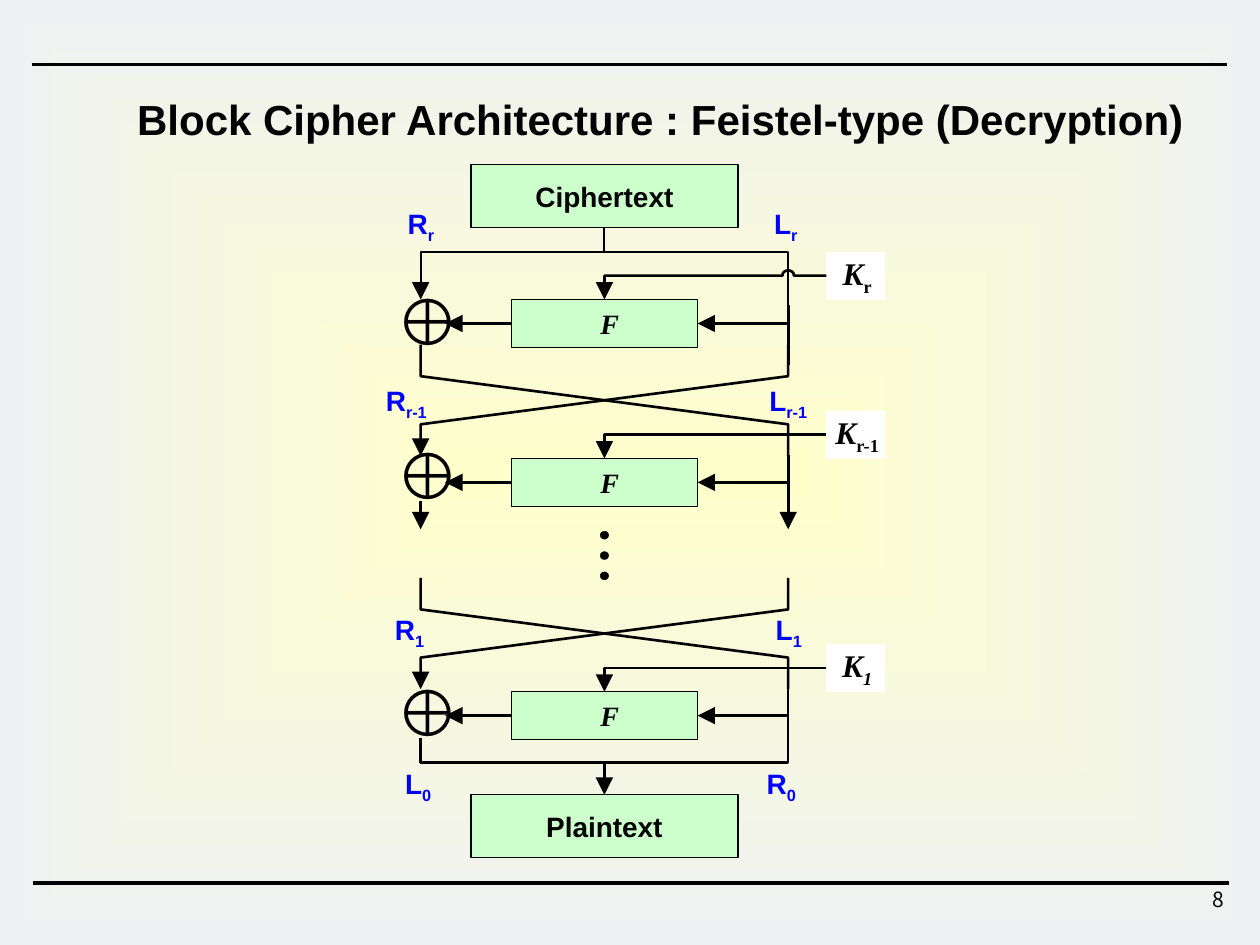
from dataclasses import dataclass

from lxml import etree
from pptx import Presentation
from pptx.dml.color import RGBColor
from pptx.enum.shapes import MSO_CONNECTOR, MSO_SHAPE
from pptx.enum.text import MSO_ANCHOR, PP_ALIGN
from pptx.oxml.ns import qn
from pptx.util import Pt

STRAIGHT = MSO_CONNECTOR.STRAIGHT
RECT, OVAL = MSO_SHAPE.RECTANGLE, MSO_SHAPE.OVAL
LEFT, CENTER, RIGHT = PP_ALIGN.LEFT, PP_ALIGN.CENTER, PP_ALIGN.RIGHT
MIDDLE, TOP = MSO_ANCHOR.MIDDLE, MSO_ANCHOR.TOP
SIDE_TOP, SIDE_LEFT, SIDE_BOTTOM, SIDE_RIGHT = range(4)


@dataclass(frozen=True)
class Theme:
    ink = RGBColor(0, 0, 0)
    white = RGBColor(255, 255, 255)
    block = RGBColor(0xCC, 0xFF, 0xCC)
    label = RGBColor(0, 0, 255)
    glow = RGBColor(0xFF, 0xFF, 0xCC)
    edge = RGBColor(0xEE, 0xF1, 0xF2)
    sans, serif, number = "Arial", "Times New Roman", "Noto Sans CJK KR"
    title_size, body_size, key_size, xor_size, number_size = 24, 16, 18, 37, 12
    rule, wire, thin, outline, hair = 2, 1.5, 1.25, 0.75, 0.25


THEME = Theme()


@dataclass(frozen=True)
class Box:
    left: float
    top: float
    width: float
    height: float

    @property
    def right(self):
        return self.left + self.width

    @property
    def bottom(self):
        return self.top + self.height

    @property
    def center(self):
        return self.left + self.width / 2

    @property
    def middle(self):
        return self.top + self.height / 2

    def lengths(self):
        return [Pt(v) for v in (self.left, self.top, self.width, self.height)]


# ---- shared drawing helpers ----
def style_line(shape, width, arrow=False):
    shape.line.color.rgb = THEME.ink
    shape.line.width = Pt(width)
    if arrow:
        tail = etree.SubElement(shape.line._get_or_add_ln(), qn("a:tailEnd"))
        for key, value in (("type", "triangle"), ("w", "lg"), ("len", "lg")):
            tail.set(key, value)


def add_wire(slide, start, end, width=THEME.wire, arrow=False):
    wire = slide.shapes.add_connector(STRAIGHT, *(Pt(v) for v in (*start, *end)))
    style_line(wire, width, arrow)
    etree.SubElement(wire._element.spPr, qn("a:effectLst"))
    return wire


def add_bent_wire(slide, points, width=THEME.wire, arrow=False):
    corners = [(Pt(x), Pt(y)) for x, y in points]
    builder = slide.shapes.build_freeform(*corners[0])
    builder.add_line_segments(corners[1:], close=False)
    wire = builder.convert_to_shape()
    wire.fill.background()
    wire.shadow.inherit = False
    style_line(wire, width, arrow)


def write(shape, text, size, font, color=THEME.ink, sub="", bold=True, italic=False,
          sub_italic=False, align=CENTER, anchor=MIDDLE, inset=0, shift=0):
    frame = shape.text_frame
    frame.word_wrap = False
    frame.vertical_anchor = anchor
    frame.margin_top = frame.margin_bottom = Pt(inset / 2)
    frame.margin_left, frame.margin_right = Pt(inset + shift), Pt(inset)
    paragraph = frame.paragraphs[0]
    paragraph.alignment = align
    paragraph.font.size, paragraph.font.name = Pt(size), font
    paragraph.font.bold = bold
    paragraph.font.color.rgb = color
    base = paragraph.add_run()
    base.text = text
    base.font.italic = italic
    if sub:
        subscript = paragraph.add_run()
        subscript.text = sub
        subscript.font.italic = sub_italic
        subscript._r.get_or_add_rPr().set("baseline", "-25000")


def add_text(slide, box, text, size, font, **style):
    write(slide.shapes.add_textbox(*box.lengths()), text, size, font, **style)


def add_shape(slide, box, fill, line, width, kind=RECT):
    shape = slide.shapes.add_shape(kind, *box.lengths())
    shape.shadow.inherit = False
    shape.fill.solid()
    shape.fill.fore_color.rgb = fill
    shape.line.color.rgb = line
    shape.line.width = Pt(width)
    return shape


def add_block(slide, box, text, font=THEME.sans, **style):
    block = add_shape(slide, box, THEME.block, THEME.ink, THEME.outline)
    write(block, text, THEME.body_size, font, **style)
    return block


# ---- regions ----
def draw_frame(slide, page):
    backdrop = add_shape(slide, page, THEME.glow, THEME.glow, THEME.hair)
    backdrop.line.fill.background()
    backdrop.fill.gradient()
    for stop, color in zip(backdrop.fill.gradient_stops, (THEME.glow, THEME.edge)):
        stop.color.rgb = color
    gradient = backdrop._element.spPr.find(qn("a:gradFill"))
    gradient.remove(gradient.find(qn("a:lin")))
    shade = etree.SubElement(gradient, qn("a:path"))
    shade.set("path", "shape")
    focus = etree.SubElement(shade, qn("a:fillToRect"))
    for side in "ltrb":
        focus.set(side, "50000")
    for left, y in ((18, 37), (18.7, 504.7)):
        add_wire(slide, (left, y), (left + 683.3, y), THEME.rule)
    add_text(slide, Box(page.right - 163.5, 503.3, 150, 24), "8", THEME.number_size,
             THEME.number, bold=False, align=RIGHT, anchor=TOP, inset=7.2)
    add_text(slide, Box(71.3, 49.7, 618.5, 36),
             "Block Cipher Architecture : Feistel-type (Decryption)",
             THEME.title_size, THEME.sans, align=LEFT, anchor=TOP, inset=7.2)


def draw_round(slide, box, key, key_italic, xor_top, hop=False):
    """One round; the box spans both rails at the height of F."""
    function = Box(box.center - 53.25, box.top, 106.5, box.height)
    block = add_block(slide, function, "F", THEME.serif, italic=True, shift=6)
    add_text(slide, Box(box.left - 14.4, xor_top, 28, 44.6), "⊕", THEME.xor_size, THEME.sans)
    # Rail to F, F to XOR
    feed = add_wire(slide, (box.right, box.middle), (function.right, box.middle), arrow=True)
    feed.end_connect(block, SIDE_RIGHT)
    result = add_wire(slide, (function.left, box.middle), (box.left + 14, box.middle), arrow=True)
    result.begin_connect(block, SIDE_LEFT)
    # Round key and its wire, hopping over the rail where asked
    key_box = Box(box.right + 21.8, box.top - 27.3, 33.2, 27.3)
    cell = add_shape(slide, key_box, THEME.white, THEME.white, THEME.hair)
    write(cell, "K", THEME.key_size, THEME.serif, sub=key, italic=True,
          sub_italic=key_italic, shift=2)
    y = key_box.middle
    arc = [(3.2, 0), (3.2, 1.2), (1.9, 2.5), (0, 3.2), (-1.9, 2.5), (-3.2, 1.2), (-3.2, 0)]
    bump = [(box.right + dx, y - dy) for dx, dy in arc] if hop else []
    add_bent_wire(slide, [(key_box.left, y), *bump, (box.center, y), (box.center, box.top)],
                  arrow=True)


def draw_crossing(slide, box):
    """Swap of halves; the box ends at the XOR below."""
    upper, lower = box.top + 18, box.bottom - 18
    for start, end, arrow in ((box.left, box.right, False), (box.right, box.left, True)):
        add_bent_wire(slide, [(start, box.top), (start, upper), (end, lower),
                              (end, box.bottom)], arrow=arrow)


def draw_labels(slide, box, left, right, sub):
    """Half-block names, centred on the left and right edge of the box."""
    for name, x in ((left, box.left), (right, box.right)):
        add_text(slide, Box(x - 15, box.top, 30, box.height), name, THEME.body_size,
                 THEME.sans, color=THEME.label, sub=sub)


def draw_cipher(slide, box):
    left, right, center = box.left, box.right, box.center
    source_box, target_box = (Box(center - 76.3, y, 152.6, 36)
                              for y in (box.top, box.bottom - 36))
    source = add_block(slide, source_box, "Ciphertext")
    target = add_block(slide, target_box, "Plaintext")
    first, second, last = (Box(left, y, box.width, 27.3) for y in (171.2, 262, 395.3))

    # Split into halves
    split = 144
    stem = add_wire(slide, (center, source_box.bottom), (center, split), THEME.thin)
    stem.begin_connect(source, SIDE_BOTTOM)
    add_bent_wire(slide, [(center, split), (left, split), (left, first.top)], THEME.thin, True)
    add_bent_wire(slide, [(center, split), (right, split), (right, first.middle)], THEME.thin)
    add_wire(slide, (right, first.top + 3), (right, first.bottom + 10))

    # Rounds and swaps
    draw_round(slide, first, "r", False, 160.5, hop=True)
    draw_round(slide, second, "r-1", False, 248.4)
    draw_round(slide, last, "1", True, 383.8)
    for stage in (second, last):
        draw_crossing(slide, Box(left, stage.top - 65, box.width, 63.5))

    # Omitted rounds
    for x, start in ((left, 286.5), (right, second.top - 2)):
        add_wire(slide, (x, start), (x, 302.5), arrow=True)
    for step in range(3):
        dot = Box(center - 2.4, 303.6 + 11.6 * step, 4.8, 4.5)
        add_shape(slide, dot, THEME.ink, THEME.ink, THEME.hair, OVAL)

    # Join the halves
    join = 435.8
    add_bent_wire(slide, [(left, 422), (left, join), (right, join), (right, last.top - 2)])
    output = add_wire(slide, (center, join), (center, target_box.top), arrow=True)
    output.end_connect(target, SIDE_TOP)

    for x1, x2, y, names, sub in ((240.5, 449, 119.2, "RL", "r"), (232.2, 450.4, 220.2, "RL", "r-1"),
                                  (234, 450.7, 351.2, "RL", "1"), (239, 446.4, 439.2, "LR", "0")):
        draw_labels(slide, Box(x1, y, x2 - x1, 19.4), *names, sub)


def main():
    deck = Presentation()
    deck.slide_width, deck.slide_height = Pt(720), Pt(540)
    slide = deck.slides.add_slide(deck.slide_layouts[6])
    draw_frame(slide, Box(0, 0, 720, 540))
    draw_cipher(slide, Box(240.4, 94.2, 210, 396))
    deck.save("out.pptx")


if __name__ == "__main__":
    main()
